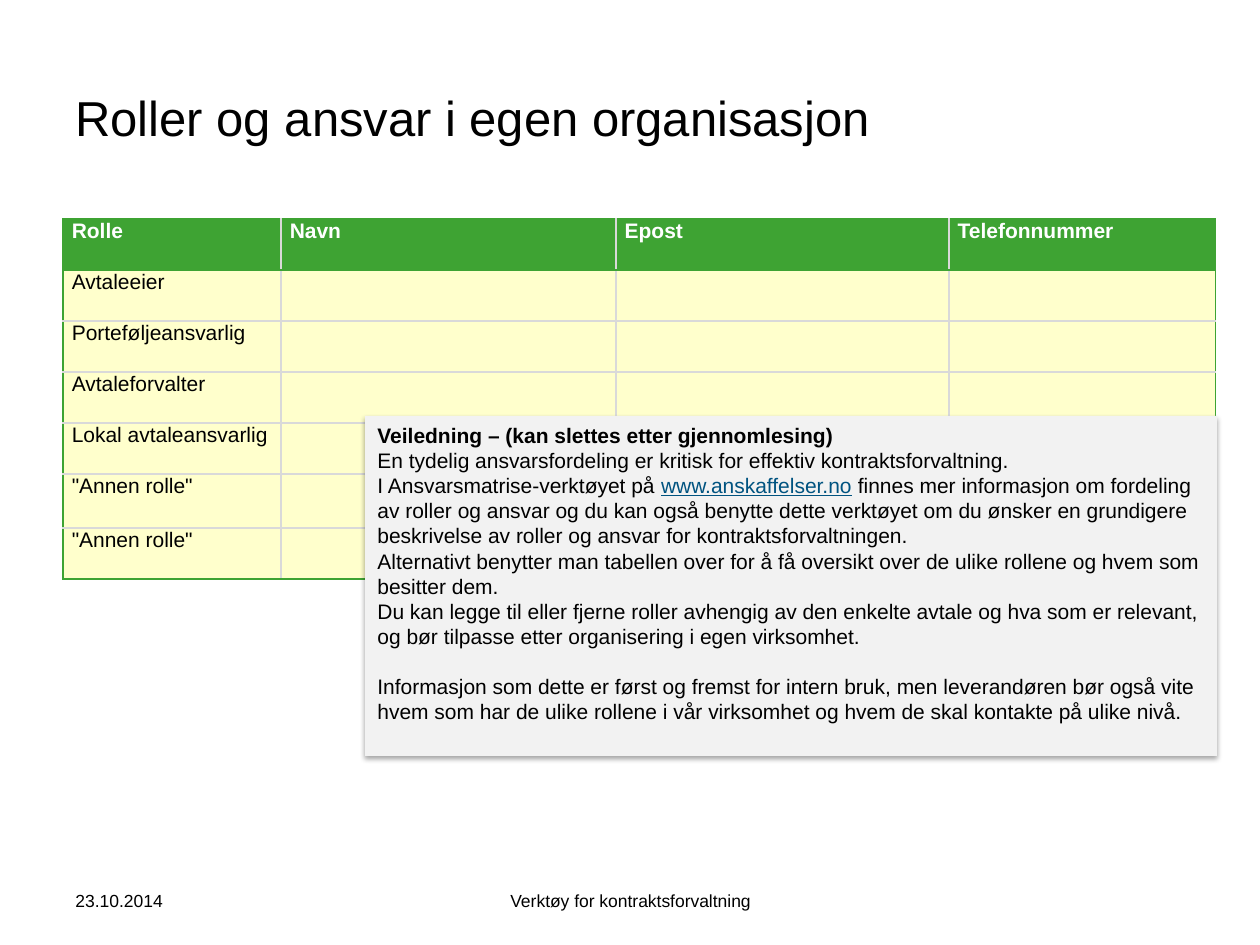
from dataclasses import dataclass

from lxml.etree import SubElement
from pptx import Presentation
from pptx.dml.color import RGBColor
from pptx.enum.shapes import MSO_SHAPE
from pptx.enum.text import MSO_ANCHOR, PP_ALIGN
from pptx.oxml.ns import qn
from pptx.util import Emu, Inches, Pt

PX = 914400 / 126
BLACK, WHITE, GREEN = "000000", "FFFFFF", "3EA333"
YELLOW, GREY, PALE, LINK = "FFFFCC", "D9D9D9", "F2F2F2", "005380"


@dataclass
class Area:
    left: int
    top: int
    width: int
    height: int

    def emu(self) -> list[Emu]:
        return [px(value) for value in (self.left, self.top, self.width, self.height)]


@dataclass
class Label:
    text: str
    area: Area
    size: int
    align: PP_ALIGN = PP_ALIGN.LEFT


@dataclass
class Span:
    text: str
    bold: bool = False
    link: bool = False


@dataclass
class Edge:
    color: str
    points: float


OUTER, INNER = Edge(GREEN, 0.75), Edge(GREY, 1)

LABELS = [
    Label("Roller og ansvar i egen organisasjon", Area(63, 38, 1134, 157), 28),
    Label("23.10.2014", Area(63, 876, 294, 50), 10),
    Label("Verktøy for kontraktsforvaltning", Area(431, 876, 399, 50), 10, PP_ALIGN.CENTER),
]
HEADINGS = ["Rolle", "Navn", "Epost", "Telefonnummer"]
ROLES = ["Avtaleeier", "Porteføljeansvarlig", "Avtaleforvalter",
         "Lokal avtaleansvarlig", '"Annen rolle"', '"Annen rolle"']
COLUMN_WIDTHS = [218, 335, 333, 267]
ROW_HEIGHTS = [51, 51, 51, 51, 51, 54, 51]
GUIDANCE = [
    [Span("Veiledning – (kan slettes etter gjennomlesing)", bold=True)],
    [Span("En tydelig ansvarsfordeling er kritisk for effektiv kontraktsforvaltning.")],
    [Span("I Ansvarsmatrise-verktøyet på "),
     Span("www.anskaffelser.no", link=True),
     Span(" finnes mer informasjon om fordeling av roller og ansvar og du kan også benytte "
          "dette verktøyet om du ønsker en grundigere beskrivelse av roller og ansvar for "
          "kontraktsforvaltningen.")],
    [Span("Alternativt benytter man tabellen over for å få oversikt over de ulike rollene "
          "og hvem som besitter dem.")],
    [Span("Du kan legge til eller fjerne roller avhengig av den enkelte avtale og hva som er "
          "relevant, og bør tilpasse etter organisering i egen virksomhet.")],
    [Span("Informasjon som dette er først og fremst for intern bruk, men leverandøren bør også "
          "vite hvem som har de ulike rollene i vår virksomhet og hvem de skal kontakte på "
          "ulike nivå.")],
]


def px(value: int) -> Emu:
    return Emu(round(value * PX))


def rgb(color: str) -> RGBColor:
    return RGBColor.from_string(color)


def style_font(font, size: int, color: str = BLACK, bold: bool = False) -> None:
    font.name = "Arial"
    font.size = Pt(size)
    font.bold = bold
    font.color.rgb = rgb(color)


def draw_label(page, label: Label) -> None:
    frame = page.shapes.add_textbox(*label.area.emu()).text_frame
    frame.word_wrap = True
    frame.vertical_anchor = MSO_ANCHOR.MIDDLE
    frame.text = label.text
    paragraph = frame.paragraphs[0]
    paragraph.alignment = label.align
    style_font(paragraph.runs[0].font, label.size)


def draw_edges(cell, edges: dict[str, Edge]) -> None:
    properties = cell._tc.get_or_add_tcPr()
    for tag, edge in edges.items():
        line = SubElement(properties, qn(f"a:{tag}"), w=str(Pt(edge.points)))
        fill = SubElement(line, qn("a:solidFill"))
        SubElement(fill, qn("a:srgbClr"), val=edge.color)


def draw_role_table(page, area: Area) -> None:
    rows = [HEADINGS] + [[role, "", "", ""] for role in ROLES]
    last_row, last_column = len(rows) - 1, len(HEADINGS) - 1
    table = page.shapes.add_table(len(rows), len(HEADINGS), *area.emu()).table
    for column, width in zip(table.columns, COLUMN_WIDTHS):
        column.width = px(width)
    for row, height in zip(table.rows, ROW_HEIGHTS):
        row.height = px(height)
    for i, texts in enumerate(rows):
        for j, text in enumerate(texts):
            cell = table.cell(i, j)
            draw_edges(cell, {
                "lnL": OUTER if j == 0 else INNER,
                "lnR": OUTER if j == last_column else INNER,
                "lnT": OUTER if i <= 1 else INNER,
                "lnB": OUTER if i in (0, last_row) else INNER,
            })
            cell.fill.solid()
            cell.fill.fore_color.rgb = rgb(GREEN if i == 0 else YELLOW)
            cell.margin_left = cell.margin_right = Inches(0.07)
            cell.margin_top = cell.margin_bottom = 0
            cell.text_frame.text = text
            for run in cell.text_frame.paragraphs[0].runs:
                style_font(run.font, 12, WHITE if i == 0 else BLACK, i == 0)


def add_shadow(box) -> None:
    box.shadow.inherit = False
    effects = box._element.spPr.find(qn("a:effectLst"))
    shadow = SubElement(effects, qn("a:outerShdw"), blurRad=str(Pt(3.1)),
                        dist=str(Pt(1.8)), dir="5400000", rotWithShape="0")
    color = SubElement(shadow, qn("a:srgbClr"), val=BLACK)
    SubElement(color, qn("a:alpha"), val="35000")


def draw_guidance(page, area: Area) -> None:
    box = page.shapes.add_shape(MSO_SHAPE.RECTANGLE, *area.emu())
    box.fill.solid()
    box.fill.fore_color.rgb = rgb(PALE)
    box.line.fill.background()
    add_shadow(box)
    frame = box.text_frame
    frame.word_wrap = True
    frame.vertical_anchor = MSO_ANCHOR.TOP
    for index, spans in enumerate(GUIDANCE):
        paragraph = frame.add_paragraph() if index else frame.paragraphs[0]
        paragraph.alignment = PP_ALIGN.LEFT
        for span in spans:
            run = paragraph.add_run()
            run.text = span.text
            style_font(run.font, 12, LINK if span.link else BLACK, span.bold)
            run.font.underline = span.link
    frame.paragraphs[-1].space_before = Pt(14)


def main() -> None:
    deck = Presentation()
    deck.slide_width, deck.slide_height = px(1260), px(945)
    page = deck.slides.add_slide(deck.slide_layouts[6])
    title, *footers = LABELS
    draw_label(page, title)
    draw_role_table(page, Area(63, 219, sum(COLUMN_WIDTHS), sum(ROW_HEIGHTS)))
    draw_guidance(page, Area(365, 416, 852, 340))
    for footer in footers:
        draw_label(page, footer)
    deck.save("out.pptx")


if __name__ == "__main__":
    main()
